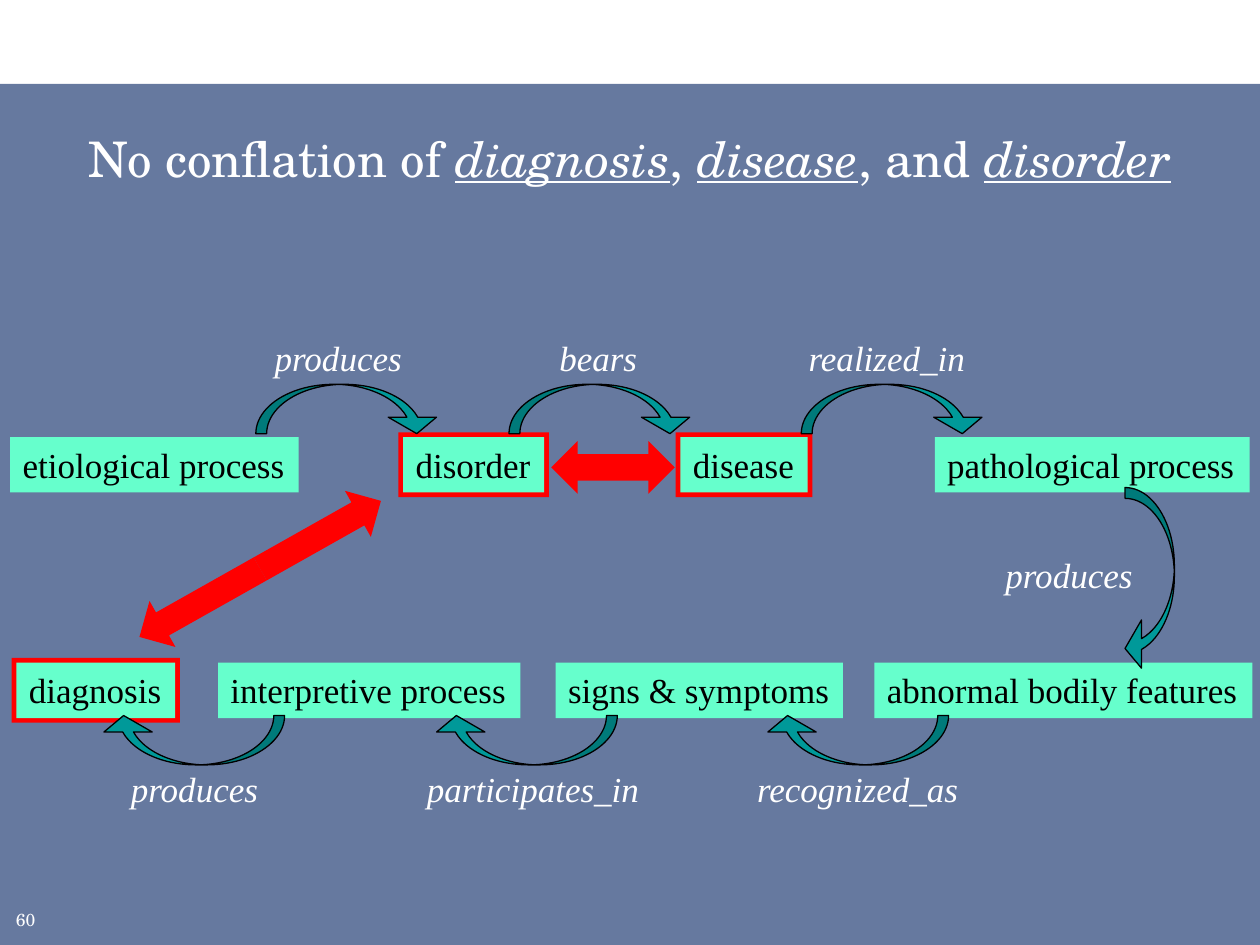
from dataclasses import dataclass
from math import cos, radians, sin
from lxml.etree import SubElement
from pptx import Presentation
from pptx.dml.color import RGBColor
from pptx.enum.shapes import MSO_SHAPE
from pptx.enum.text import MSO_ANCHOR, MSO_AUTO_SIZE, PP_ALIGN
from pptx.oxml.ns import qn
from pptx.util import Pt


@dataclass(frozen=True)
class Theme:
    panel: str = "002060"
    node: str = "66FFCC"
    mark: str = "FF0000"
    arc: str = "009999"
    dark: str = "000000"
    light: str = "FFFFFF"
    head_font: str = "TeX Gyre Schola"
    body_font: str = "Times New Roman"
    title: int = 28
    body: int = 20
    small: int = 10


T = Theme()
LINE_H = 31.6
ARC_W, ARC_H = 105.8, 28.2
FRAME_PAD = 2.7

UPPER_NODES = [
    ("etiological process", 5.8, 164.9, False),
    ("disorder", 230.4, 80.6, True),
    ("disease", 388.8, 72.7, True),
    ("pathological process", 534.2, 180, False),
]
UPPER_LINKS = [
    ("produces", 149.8, 87.8, 146.2),
    ("bears", 312.5, 59, 290.9),
    ("realized_in", 455, 104.4, 457.9),
]
LOWER_NODES = [
    ("diagnosis", 9.4, 90.7, True),
    ("interpretive process", 124.6, 172.8, False),
    ("signs & symptoms", 317.5, 164.2, False),
    ("abnormal bodily features", 499.7, 216, False),
]
LOWER_LINKS = [
    ("produces", 67.7, 87.8, 56.9),
    ("participates_in", 236.9, 136.8, 247),
    ("recognized_as", 425.5, 130.3, 436.3),
]


def rgb(c):
    return RGBColor.from_string(c)


def shape(sl, kind, box, fill, line=None, rot=0, flip="", adj=()):
    s = sl.shapes.add_shape(kind, *map(Pt, box))
    s.shadow.inherit = False
    s.fill.solid()
    s.fill.fore_color.rgb = rgb(fill)
    if line:
        s.line.color.rgb = rgb(line)
        s.line.width = Pt(0.75)
    else:
        s.line.fill.background()
    s.rotation = rot
    xfrm = s._element.spPr.find(qn("a:xfrm"))
    for axis in flip:
        xfrm.set("flip" + axis, "1")
    for i, v in enumerate(adj):
        s.adjustments[i] = v
    return s


def write(s, runs, size, color, font, align=PP_ALIGN.LEFT, wrap=False, anchor=MSO_ANCHOR.TOP):
    tf = s.text_frame
    tf.auto_size = MSO_AUTO_SIZE.NONE if wrap else MSO_AUTO_SIZE.SHAPE_TO_FIT_TEXT
    for k, v in {"word_wrap": wrap, "vertical_anchor": anchor}.items():
        setattr(tf, k, v)
    p = tf.paragraphs[0]
    p.alignment = align
    for text, fmt in runs:
        r = p.add_run()
        r.text = text
        r.font.color.rgb = rgb(color)
        for k, v in {"name": font, "size": Pt(size), **fmt}.items():
            setattr(r.font, k, v)


def panel(sl, box):
    s = shape(sl, MSO_SHAPE.RECTANGLE, box, T.panel)
    clr = s._element.spPr.find(".//" + qn("a:srgbClr"))
    SubElement(clr, qn("a:alpha")).set("val", "60000")


def page_number(sl, box):
    s = sl.shapes.add_textbox(*map(Pt, box))
    write(s, [("60", {})], T.small, T.light, T.head_font, wrap=True, anchor=MSO_ANCHOR.MIDDLE)


def title(sl, box):
    term = {"italic": True, "underline": True}
    runs = [("No conflation of ", {}), ("diagnosis", term), (", ", {}),
            ("disease", term), (", and ", {}), ("disorder", term)]
    s = sl.shapes.add_textbox(*map(Pt, box))
    write(s, runs, T.title, T.light, T.head_font, PP_ALIGN.CENTER, True, MSO_ANCHOR.MIDDLE)


def node(sl, box, text, marked):
    x, y, w, h = box
    if marked:
        frame = (x - FRAME_PAD, y - FRAME_PAD, w + 2 * FRAME_PAD, h + 2 * FRAME_PAD)
        shape(sl, MSO_SHAPE.RECTANGLE, frame, T.mark)
    s = shape(sl, MSO_SHAPE.RECTANGLE, box, T.node)
    write(s, [(text, {})], T.body, T.dark, T.body_font)


def link(sl, label_box, arc_at, text, rot=0, flip=""):
    s = sl.shapes.add_textbox(*map(Pt, label_box))
    write(s, [(text, {"italic": True})], T.body, T.light, T.body_font)
    shape(sl, MSO_SHAPE.CURVED_DOWN_ARROW, (*arc_at, ARC_W, ARC_H), T.arc, T.dark,
          rot, flip, (0.22, 0.978, 0.333))


def chain(sl, box, nodes, links, below=False):
    x, y, w, h = box
    node_y = y if below else y + h - LINE_H
    arc_y = y + 30.2 if below else y + 31
    label_y = y + h - LINE_H if below else y
    for text, dx, nw, marked in nodes:
        node(sl, (x + dx, node_y, nw, LINE_H), text, marked)
    for text, dx, lw, arc_x in links:
        link(sl, (x + dx, label_y, lw, LINE_H), (x + arc_x, arc_y), text,
             flip="HV" if below else "")


def double_arrow(sl, box, angle=0):
    x, y, w, h = box
    half = w / 2
    cx, cy = x + half, y + h / 2
    for side, flip in ((1, ""), (-1, "H")):
        mx = cx + side * half / 2 * cos(radians(angle))
        my = cy + side * half / 2 * sin(radians(angle))
        shape(sl, MSO_SHAPE.RIGHT_ARROW, (mx - half / 2, my - h / 2, half, h), T.mark,
              rot=angle, flip=flip, adj=(0.5, 0.5))


def turn(sl, box):
    x, y, w, h = box
    arc_at = (x + w - ARC_H / 2 - ARC_W / 2, y + h / 2 - ARC_H / 2)
    link(sl, (x, y + 47, 87.8, LINE_H), arc_at, "produces", 270, "HV")


def main():
    prs = Presentation()
    prs.slide_width, prs.slide_height = Pt(720), Pt(540)
    sl = prs.slides.add_slide(prs.slide_layouts[6])
    panel(sl, (0, 48, 720, 492))
    page_number(sl, (2, 516.2, 28, 18))
    double_arrow(sl, (69.5, 310, 158.4, 30.2), -29.4)
    double_arrow(sl, (315, 252, 70.6, 30.2))
    chain(sl, (0, 188.6, 720, 92.8), UPPER_NODES, UPPER_LINKS)
    chain(sl, (0, 378.7, 720, 87.8), LOWER_NODES, LOWER_LINKS, below=True)
    turn(sl, (567.4, 265.5, 103.7, 132))
    title(sl, (18, 60, 684, 60))
    prs.save("out.pptx")


if __name__ == "__main__":
    main()
